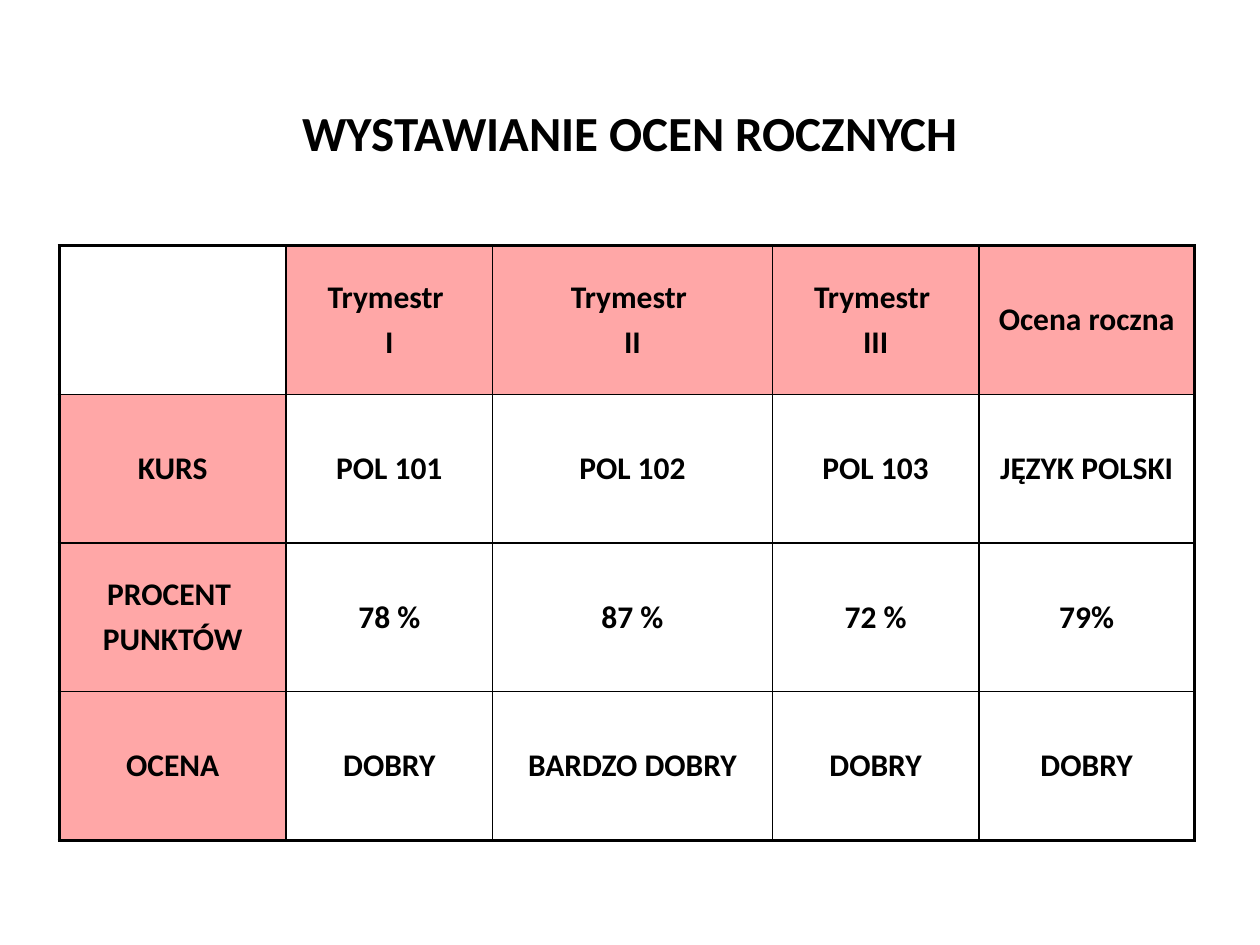
from pptx import Presentation
from pptx.dml.color import RGBColor
from pptx.enum.text import MSO_ANCHOR, PP_ALIGN
from pptx.oxml.ns import qn
from pptx.util import Inches, Pt
from lxml.etree import SubElement

# Content
TITLE = "WYSTAWIANIE OCEN ROCZNYCH"
ROWS = [
    ["", "Trymestr \nI", "Trymestr \nII", "Trymestr \nIII", "Ocena roczna"],
    ["KURS", "POL 101", "POL 102", "POL 103", "JĘZYK POLSKI"],
    ["PROCENT \nPUNKTÓW", "78 %", "87 %", "72 %", "79%"],
    ["OCENA", "DOBRY", "BARDZO DOBRY", "DOBRY", "DOBRY"],
]
COL_WIDTHS = [1.8, 1.64, 2.22, 1.64, 1.71]
ROW_HEIGHT = 1.18
BLACK, RED = "000000", "FF5050"
OUTER, INNER = 2.25, 1


def color(hex_value):
    return RGBColor.from_string(hex_value)


def write(tf, text, size):
    tf.vertical_anchor = MSO_ANCHOR.MIDDLE
    tf.word_wrap = True
    for i, line in enumerate(text.split("\n")):
        p = tf.paragraphs[0] if i == 0 else tf.add_paragraph()
        p.alignment = PP_ALIGN.CENTER
        p.space_before = Pt(0.2 * size if i else 0)
        r = p.add_run()
        r.text = line
        for name, value in {"name": "Calibri", "size": Pt(size), "bold": True}.items():
            setattr(r.font, name, value)
        r.font.color.rgb = color(BLACK)


def set_borders(cell, widths):
    tcPr = cell._tc.get_or_add_tcPr()
    for side, width in widths.items():
        ln = SubElement(tcPr, qn(f"a:ln{side}"), w=str(Pt(width)))
        fill = SubElement(ln, qn("a:solidFill"))
        SubElement(fill, qn("a:srgbClr"), val=BLACK)


def set_fill(cell, is_header):
    if not is_header:
        cell.fill.background()
        return
    cell.fill.solid()
    cell.fill.fore_color.rgb = color(RED)
    clr = cell._tc.tcPr.find(qn("a:solidFill")).find(qn("a:srgbClr"))
    SubElement(clr, qn("a:alpha"), val="50000")


prs = Presentation()
prs.slide_width, prs.slide_height = Inches(10), Inches(7.5)
s = prs.slides.add_slide(prs.slide_layouts[5])

# Title
title = s.shapes.title
title.left, title.top, title.width, title.height = map(Inches, (0.5, 0.55, 9, 1))
write(title.text_frame, TITLE, 28)

# Grade table
n_rows, n_cols = len(ROWS), len(COL_WIDTHS)
table = s.shapes.add_table(n_rows, n_cols, Inches(0.47), Inches(1.95),
                           Inches(sum(COL_WIDTHS)), Inches(ROW_HEIGHT * n_rows)).table
table.first_row = table.horz_banding = False
for col, width in zip(table.columns, COL_WIDTHS):
    col.width = Inches(width)
for i, texts in enumerate(ROWS):
    table.rows[i].height = Inches(ROW_HEIGHT)
    for j, text in enumerate(texts):
        cell = table.cell(i, j)
        cell.vertical_anchor = MSO_ANCHOR.MIDDLE
        edges = {"L": j == 0, "R": j == n_cols - 1, "T": i == 0, "B": i == n_rows - 1}
        set_borders(cell, {side: OUTER if on_edge else INNER
                           for side, on_edge in edges.items()})
        set_fill(cell, (i == 0) != (j == 0))
        if text:
            write(cell.text_frame, text, 18)

prs.save("out.pptx")
